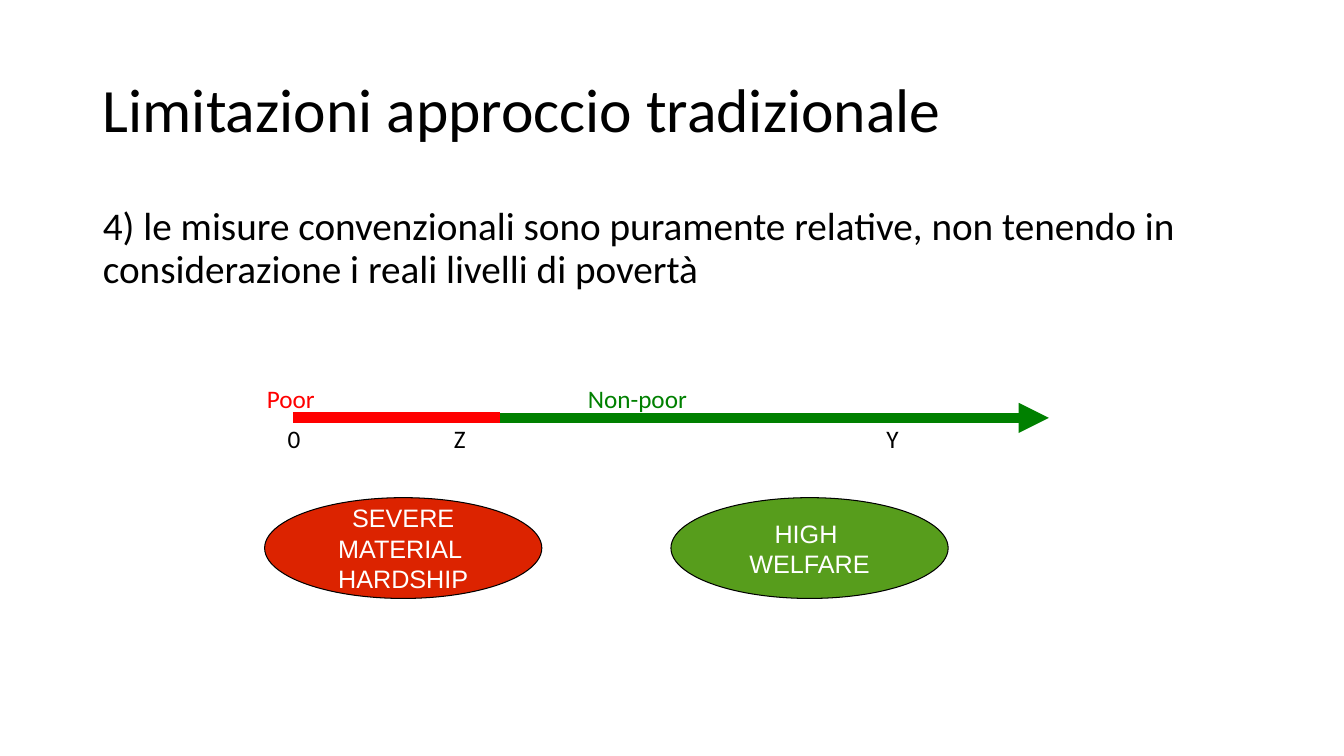
import pptx
import pptx.util
import pptx.dml.color
import pptx.enum.shapes
import pptx.enum.text
import pptx.oxml.ns
import lxml.etree

PX = 9525
COLORS = {
    "text": "000000", "poor": "FF0000", "non_poor": "008000",
    "hardship": "DC2300", "welfare": "579D1C", "light": "FFFFFF",
}
ALIGN = pptx.enum.text.PP_ALIGN
ANCHOR = pptx.enum.text.MSO_ANCHOR


def px(*lengths):
    """Turn px lengths into EMU."""
    return [pptx.util.Emu(n * PX) for n in lengths]


def rgb(name):
    """Look up a named colour."""
    return pptx.dml.color.RGBColor.from_string(COLORS[name])


def write(sp, text, size=18, color="text", font="Calibri", align=ALIGN.LEFT,
          anchor=ANCHOR.TOP, spacing=1.0, before=0, margins=(10, 5)):
    """Fill a shape with formatted text, one paragraph per line."""
    tf = sp.text_frame
    tf.word_wrap = True
    tf.vertical_anchor = anchor
    tf.margin_left = tf.margin_right = margins[0] * PX
    tf.margin_top = tf.margin_bottom = margins[1] * PX
    for i, line in enumerate(text.split("\n")):
        p = tf.paragraphs[0] if i == 0 else tf.add_paragraph()
        p.alignment = align
        p.line_spacing = spacing
        p.space_before = pptx.util.Pt(before)
        r = p.add_run()
        r.text = line
        r.font.size = pptx.util.Pt(size)
        r.font.name = font
        r.font.color.rgb = rgb(color)


def add_text(s, box, text, **style):
    """Place a text box."""
    write(s.shapes.add_textbox(*px(*box)), text, **style)


def add_line(s, x1, x2, y, color, width, arrow=False):
    """Draw a horizontal line, optionally ending in an arrowhead."""
    line = s.shapes.add_connector(
        pptx.enum.shapes.MSO_CONNECTOR.STRAIGHT, *px(x1, y, x2, y))
    line.line.color.rgb = rgb(color)
    line.line.width = pptx.util.Pt(width)
    qn = pptx.oxml.ns.qn
    if arrow:
        lxml.etree.SubElement(line.line._get_or_add_ln(), qn("a:tailEnd"), type="triangle")
    lxml.etree.SubElement(line._element.spPr, qn("a:effectLst"))


def add_axis(s, box):
    """Draw the income axis with its labels above and below."""
    x, y, w, h = box
    mid = y + h // 2
    add_line(s, x, x + w, mid, "non_poor", 7.2, arrow=True)
    add_line(s, x, x + 197, mid, "poor", 7.91)
    labels = [
        ("Poor", -2, y, "poor"), ("Non-poor", 328, y, "non_poor"),
        ("0", 1, y + h, "text"), ("Z", 159, y + h, "text"), ("Y", 571, y + h, "text"),
    ]
    for text, dx, cy, color in labels:
        add_text(s, (x + dx - 60, cy - 15, 120, 30), text, color=color,
                 align=ALIGN.CENTER, anchor=ANCHOR.MIDDLE, margins=(0, 0))


def add_outcome(s, box, text, fill):
    """Draw a captioned ellipse."""
    sp = s.shapes.add_shape(pptx.enum.shapes.MSO_SHAPE.OVAL, *px(*box))
    sp.shadow.inherit = False
    sp.fill.solid()
    sp.fill.fore_color.rgb = rgb(fill)
    sp.line.color.rgb = rgb("text")
    sp.line.width = pptx.util.Pt(0.75)
    write(sp, text, color="light", font="Arial", align=ALIGN.CENTER, anchor=ANCHOR.MIDDLE)


def main():
    """Build and save the slide."""
    prs = pptx.Presentation()
    prs.slide_width, prs.slide_height = px(1280, 720)
    s = prs.slides.add_slide(prs.slide_layouts[6])
    add_text(s, (88, 38, 1104, 139), "Limitazioni approccio tradizionale",
             size=44, anchor=ANCHOR.MIDDLE, spacing=0.9)
    add_text(s, (88, 192, 1104, 457),
             "4) le misure convenzionali sono puramente relative, non tenendo in "
             "considerazione i reali livelli di povertà",
             size=28, spacing=0.9, before=10)
    add_outcome(s, (252, 474, 264, 96), "SEVERE MATERIAL \nHARDSHIP", "hardship")
    add_outcome(s, (639, 474, 264, 96), "HIGH \nWELFARE", "welfare")
    add_axis(s, (279, 379, 720, 39))
    prs.save("out.pptx")


if __name__ == "__main__":
    main()
